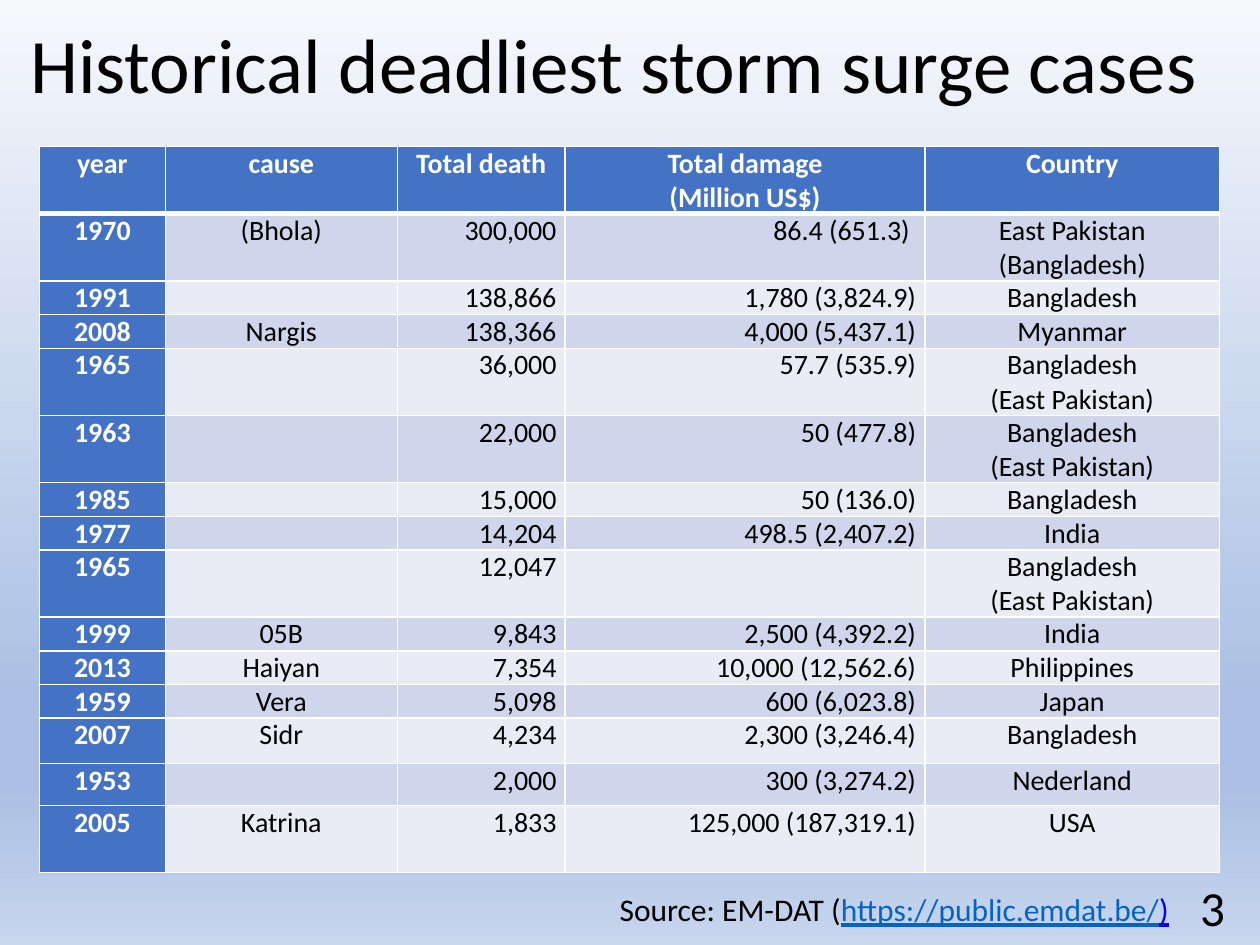
import pptx
import pptx.dml.color
import pptx.enum.text
import pptx.oxml
import pptx.oxml.ns
import pptx.util
from lxml import etree

Pt = pptx.util.Pt
RGBColor = pptx.dml.color.RGBColor
PP_ALIGN = pptx.enum.text.PP_ALIGN
MSO_ANCHOR = pptx.enum.text.MSO_ANCHOR
MSO_AUTO_SIZE = pptx.enum.text.MSO_AUTO_SIZE
qn = pptx.oxml.ns.qn

FONT = "Calibri"
BLACK = RGBColor(0x00, 0x00, 0x00)
WHITE = RGBColor(0xFF, 0xFF, 0xFF)
HEADER_BLUE = RGBColor(0x44, 0x72, 0xC4)
BAND_DARK = RGBColor(0xCF, 0xD5, 0xEA)
BAND_LIGHT = RGBColor(0xE9, 0xEB, 0xF5)
URL_BLUE = RGBColor(0x05, 0x63, 0xC1)
BRACKET_BLUE = RGBColor(0x00, 0x00, 0xFF)
BACKGROUND_STOPS = [
    (0, RGBColor(0xF6, 0xF8, 0xFC)),
    (74, RGBColor(0xAB, 0xC0, 0xE4)),
    (83, RGBColor(0xAB, 0xC0, 0xE4)),
    (100, RGBColor(0xC7, 0xD5, 0xED)),
]

CELL_SIZE = 16
LINE_HEIGHT = 19.2
COLUMN_WIDTHS = [72, 132.5, 96, 205.5, 168.5]
COLUMN_ALIGNS = [PP_ALIGN.CENTER, PP_ALIGN.CENTER, PP_ALIGN.RIGHT,
                 PP_ALIGN.RIGHT, PP_ALIGN.CENTER]
TALL_ROWS = {"2007": 26, "1953": 24, "2005": 2 * LINE_HEIGHT}
ROWS = [
    ("year", "cause", "Total death", "Total damage\n(Million US$)", "Country"),
    ("1970", "(Bhola)", "300,000", "86.4 (651.3) ", "East Pakistan\n(Bangladesh)"),
    ("1991", "", "138,866", "1,780 (3,824.9)", "Bangladesh"),
    ("2008", "Nargis", "138,366", "4,000 (5,437.1)", "Myanmar"),
    ("1965", "", "36,000", "57.7 (535.9)", "Bangladesh\n(East Pakistan)"),
    ("1963", "", "22,000", "50 (477.8)", "Bangladesh\n(East Pakistan)"),
    ("1985", "", "15,000", "50 (136.0)", "Bangladesh"),
    ("1977", "", "14,204", "498.5 (2,407.2)", "India"),
    ("1965", "", "12,047", "", "Bangladesh\n(East Pakistan)"),
    ("1999", "05B", "9,843", "2,500 (4,392.2)", "India"),
    ("2013", "Haiyan", "7,354", "10,000 (12,562.6)", "Philippines"),
    ("1959", "Vera", "5,098", "600 (6,023.8)", "Japan"),
    ("2007", "Sidr", "4,234", "2,300 (3,246.4)", "Bangladesh"),
    ("1953", "", "2,000", "300 (3,274.2)", "Nederland"),
    ("2005", "Katrina", "1,833", "125,000 (187,319.1)", "USA"),
]


def format_run(r, size, color, bold=False, underline=False):
    r.font.name = FONT
    r.font.size = Pt(size)
    r.font.color.rgb = color
    r.font.bold = bold
    r.font.underline = underline


def set_background(slide):
    """Fill the slide from top to bottom with the four-stop gradient."""
    fill = slide.background.fill
    fill.gradient()
    fill.gradient_angle = 270
    stops = slide.background._cSld.find(".//" + qn("a:gsLst"))
    for old in list(stops):
        stops.remove(old)
    for percent, color in BACKGROUND_STOPS:
        gs = etree.SubElement(stops, qn("a:gs"), pos=str(percent * 1000))
        etree.SubElement(gs, qn("a:srgbClr"), val=str(color))


def set_title(slide, text):
    sp = slide.shapes.title
    sp.left, sp.top, sp.width, sp.height = Pt(10), Pt(1.5), Pt(698), Pt(75.5)
    tf = sp.text_frame
    tf.text = text
    tf.auto_size = MSO_AUTO_SIZE.NONE
    tf.vertical_anchor = MSO_ANCHOR.MIDDLE
    p = tf.paragraphs[0]
    p.alignment = PP_ALIGN.LEFT
    p.line_spacing = 0.9
    format_run(p.runs[0], 44, BLACK)


def add_text(slide, left, top, width, height, runs, size, align=PP_ALIGN.LEFT):
    """Add one line of text; runs are (text, color, underline)."""
    sp = slide.shapes.add_textbox(Pt(left), Pt(top), Pt(width), Pt(height))
    tf = sp.text_frame
    tf.word_wrap = True
    tf.vertical_anchor = MSO_ANCHOR.MIDDLE
    p = tf.paragraphs[0]
    p.alignment = align
    for text, color, underline in runs:
        r = p.add_run()
        r.text = text
        format_run(r, size, color, underline=underline)


def set_borders(cell, top, bottom):
    """Draw white borders; the sides are 1 pt wide."""
    tc_pr = cell._tc.get_or_add_tcPr()
    widths = [("a:lnL", 1), ("a:lnR", 1), ("a:lnT", top), ("a:lnB", bottom)]
    for i, (tag, width) in enumerate(widths):
        ln = etree.Element(qn(tag), w=str(Pt(width)))
        fill = etree.SubElement(ln, qn("a:solidFill"))
        etree.SubElement(fill, qn("a:srgbClr"), val=str(WHITE))
        tc_pr.insert(i, ln)


def fill_cell(cell, text, align, fill, color, bold):
    cell.margin_left = cell.margin_right = Pt(5)
    cell.margin_top = cell.margin_bottom = 0
    cell.fill.solid()
    cell.fill.fore_color.rgb = fill
    cell.text_frame.text = text
    for p in cell.text_frame.paragraphs:
        p.alignment = align
        for r in p.runs:
            format_run(r, CELL_SIZE, color, bold)
        if not p.runs:
            # An empty cell keeps the row low only with its own text size.
            etree.SubElement(p._p, qn("a:endParaRPr"), sz=str(CELL_SIZE * 100))


def row_height(row):
    lines = max(text.count("\n") + 1 for text in row)
    return TALL_ROWS.get(row[0], lines * LINE_HEIGHT)


def add_surge_table(slide):
    heights = [row_height(row) for row in ROWS]
    frame = slide.shapes.add_table(
        len(ROWS), len(COLUMN_WIDTHS), Pt(22.5), Pt(83.75),
        Pt(sum(COLUMN_WIDTHS)), Pt(sum(heights)))
    table = frame.table
    table.first_col = True
    for column, width in zip(table.columns, COLUMN_WIDTHS):
        column.width = Pt(width)
    for i, row in enumerate(ROWS):
        table.rows[i].height = Pt(heights[i])
        band = BAND_DARK if i % 2 else BAND_LIGHT
        for j, text in enumerate(row):
            heading = i == 0 or j == 0
            cell = table.cell(i, j)
            fill_cell(cell, text,
                      PP_ALIGN.CENTER if heading else COLUMN_ALIGNS[j],
                      HEADER_BLUE if heading else band,
                      WHITE if heading else BLACK, heading)
            set_borders(cell, top=3 if i == 1 else 1, bottom=3 if i == 0 else 1)


def main():
    prs = pptx.Presentation()
    prs.slide_width, prs.slide_height = Pt(720), Pt(540)
    slide = prs.slides.add_slide(prs.slide_layouts[5])
    set_background(slide)
    set_title(slide, "Historical deadliest storm surge cases")
    add_text(slide, 347, 505, 360, 29, [
        ("Source: EM-DAT (", BLACK, False),
        ("https://public.emdat.be/", URL_BLUE, True),
        (")", BRACKET_BLUE, True),
    ], 18)
    add_text(slide, 545, 503.5, 162, 29, [("3", BLACK, False)], 28, PP_ALIGN.RIGHT)
    add_surge_table(slide)
    prs.save("out.pptx")


if __name__ == "__main__":
    main()
